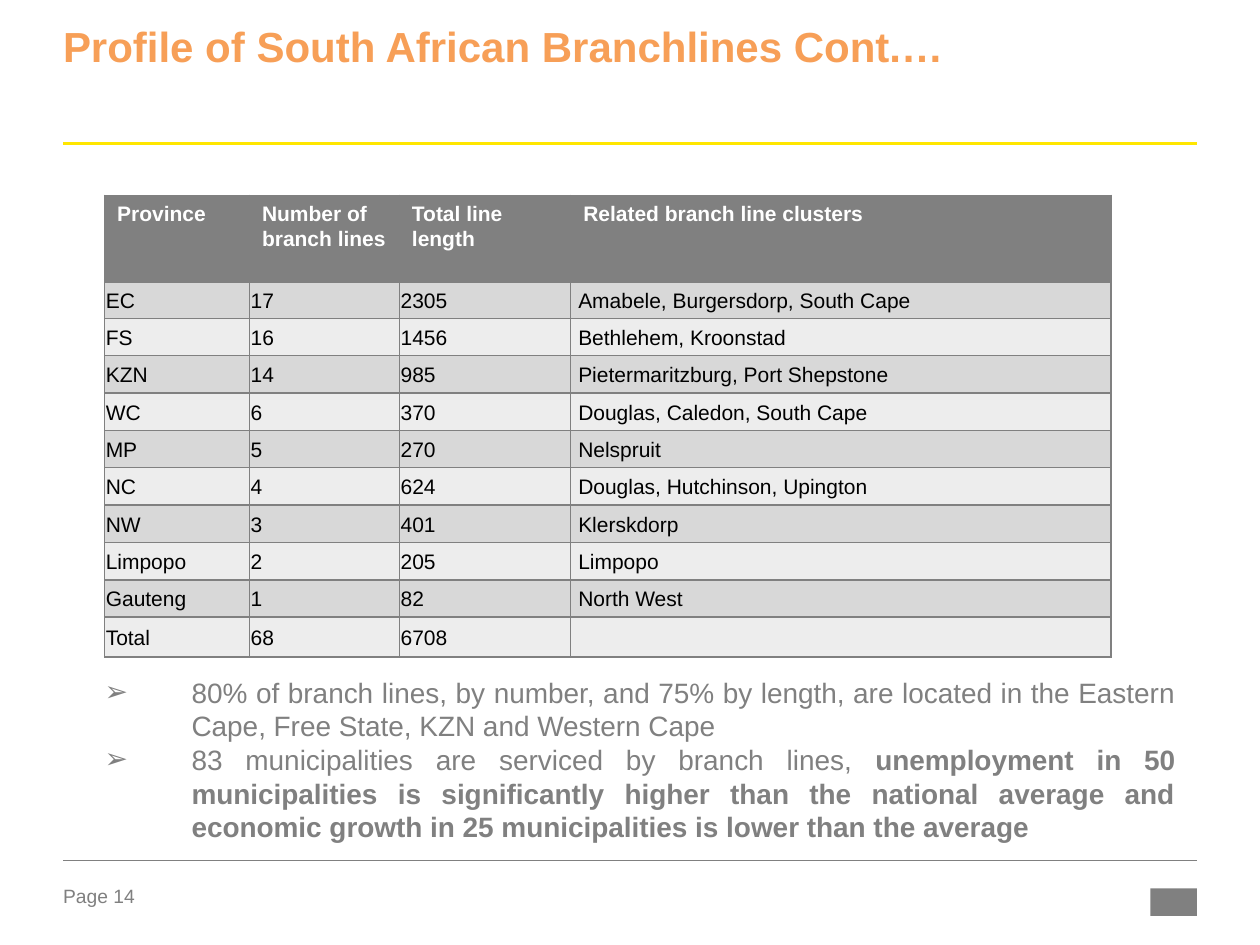
import pptx
import pptx.util
import pptx.dml.color
import pptx.enum.shapes
import pptx.enum.text
import pptx.oxml.ns
from lxml import etree

Inches, Pt = pptx.util.Inches, pptx.util.Pt
RGB = pptx.dml.color.RGBColor.from_string
TextEnum = pptx.enum.text

TITLE = "Profile of South African Branchlines Cont.…"
HEADER = ("Province", "Number of branch lines", "Total line length",
          "Related branch line clusters")
PROVINCES = [
    ("EC", "17", "2305", "Amabele, Burgersdorp, South Cape"),
    ("FS", "16", "1456", "Bethlehem, Kroonstad"),
    ("KZN", "14", "985", "Pietermaritzburg, Port Shepstone"),
    ("WC", "6", "370", "Douglas, Caledon, South Cape"),
    ("MP", "5", "270", "Nelspruit"),
    ("NC", "4", "624", "Douglas, Hutchinson, Upington"),
    ("NW", "3", "401", "Klerskdorp"),
    ("Limpopo", "2", "205", "Limpopo"),
    ("Gauteng", "1", "82", "North West"),
    ("Total", "68", "6708", ""),
]
# Each finding is a list of (text, bold) spans.
FINDINGS = [
    [("80% of branch lines, by number, and 75% by length, are located in the "
      "Eastern Cape, Free State, KZN and Western Cape", False)],
    [("83 municipalities are serviced by branch lines, ", False),
     ("unemployment in 50 municipalities is significantly higher than the "
      "national average and economic growth in 25 municipalities is lower "
      "than the average", True)],
]
PAGE_LABEL = "Page 14"

THEME = {
    "font": "Arial",
    "orange": "F79F57", "yellow": "FFE600", "gray": "808080",
    "white": "FFFFFF", "black": "000000", "bands": ("D8D8D8", "EDEDED"),
    "title": 24, "body": 16, "table": 12, "footer": 11,
}
LEFT, RIGHT = 0.5, 9.5
TABLE_LEFT, TABLE_TOP, TABLE_HEIGHT = 0.83, 1.55, 3.62
COLUMN_WIDTHS = (1.15, 1.19, 1.36, 4.29)
HEADER_HEIGHT, TOTAL_HEIGHT = 0.68, 0.27
BULLET_INDENT = 0.69


def apply(target, values):
    for name, value in values.items():
        setattr(target, name, value)


def add_span(para, text, size, color, bold=False):
    span = para.add_run()
    span.text = text
    apply(span.font, {"name": THEME["font"], "size": Pt(THEME[size]),
                      "bold": bold})
    span.font.color.rgb = RGB(THEME[color])


def place(shape, left, top, width, height):
    apply(shape, {"left": Inches(left), "top": Inches(top),
                  "width": Inches(width), "height": Inches(height)})


def set_frame(frame, top_margin=0):
    apply(frame, {"margin_left": 0, "margin_right": 0, "margin_bottom": 0,
                  "margin_top": Inches(top_margin), "word_wrap": True,
                  "auto_size": TextEnum.MSO_AUTO_SIZE.NONE,
                  "vertical_anchor": TextEnum.MSO_ANCHOR.TOP})


def add_child(parent, tag, **attributes):
    return etree.SubElement(parent, pptx.oxml.ns.qn(tag), attributes)


def add_rule(page, y, color, weight):
    rule = page.shapes.add_connector(
        pptx.enum.shapes.MSO_CONNECTOR.STRAIGHT,
        Inches(LEFT), Inches(y), Inches(RIGHT), Inches(y))
    rule.line.color.rgb = RGB(THEME[color])
    rule.line.width = Pt(weight)
    add_child(rule._element.spPr, "a:effectLst")


def add_title(page):
    title = page.shapes.title
    place(title, LEFT, 0.22, RIGHT - LEFT, 0.62)
    set_frame(title.text_frame)
    para = title.text_frame.paragraphs[0]
    apply(para, {"alignment": TextEnum.PP_ALIGN.LEFT, "line_spacing": 0.85})
    add_span(para, TITLE, "title", "orange", True)


def add_borders(cell, bottom):
    properties = cell._tc.get_or_add_tcPr()
    for side, weight in (("L", 1), ("R", 1), ("T", 1), ("B", bottom)):
        line = add_child(properties, f"a:ln{side}", w=str(Pt(weight)))
        add_child(add_child(line, "a:solidFill"), "a:srgbClr",
                  val=THEME["gray"])


def add_province_table(page):
    rows = [HEADER] + PROVINCES
    table = page.shapes.add_table(
        len(rows), len(HEADER), Inches(TABLE_LEFT), Inches(TABLE_TOP),
        Inches(sum(COLUMN_WIDTHS)), Inches(TABLE_HEIGHT)).table
    table.horz_banding = False
    for column, width in zip(table.columns, COLUMN_WIDTHS):
        column.width = Inches(width)
    body_height = ((TABLE_HEIGHT - HEADER_HEIGHT - TOTAL_HEIGHT)
                   / (len(rows) - 2))
    heights = ([HEADER_HEIGHT] + [body_height] * (len(rows) - 2)
               + [TOTAL_HEIGHT])

    for r, values in enumerate(rows):
        table.rows[r].height = Inches(heights[r])
        is_header = r == 0
        fill = THEME["gray"] if is_header else THEME["bands"][(r - 1) % 2]
        for c, value in enumerate(values):
            cell = table.cell(r, c)
            add_borders(cell, 3 if is_header else 1)
            cell.fill.solid()
            cell.fill.fore_color.rgb = RGB(fill)
            if not is_header:
                is_cluster = c == len(HEADER) - 1
                apply(cell, {
                    "margin_left": Inches(0.06 if is_cluster else 0.01),
                    "margin_right": Inches(0.01),
                    "margin_top": Inches(0.01), "margin_bottom": 0,
                    "vertical_anchor": TextEnum.MSO_ANCHOR.MIDDLE})
            para = cell.text_frame.paragraphs[0]
            para.line_spacing = Pt(14)
            if value:
                add_span(para, value, "table",
                         "white" if is_header else "black", is_header)


def add_findings(page):
    body = page.placeholders[1]
    place(body, TABLE_LEFT, 5.32, 8.5, 1.39)
    frame = body.text_frame
    set_frame(frame, 0.04)
    for i, spans in enumerate(FINDINGS):
        para = frame.add_paragraph() if i else frame.paragraphs[0]
        apply(para, {"level": 3, "alignment": TextEnum.PP_ALIGN.JUSTIFY,
                     "space_before": Pt(0), "space_after": Pt(0)})
        properties = para._p.get_or_add_pPr()
        properties.set("marL", str(Inches(BULLET_INDENT)))
        properties.set("indent", str(-Inches(BULLET_INDENT)))
        add_child(properties, "a:buFont", typeface=THEME["font"])
        add_child(properties, "a:buChar", char="➢")
        for text, bold in spans:
            add_span(para, text, "body", "gray", bold)


def add_footer(page):
    label = page.shapes.add_textbox(
        Inches(LEFT), Inches(7.02), Inches(0.79), Inches(0.22))
    set_frame(label.text_frame)
    add_span(label.text_frame.paragraphs[0], PAGE_LABEL, "footer", "gray")
    block = page.shapes.add_shape(
        pptx.enum.shapes.MSO_SHAPE.RECTANGLE,
        Inches(9.13), Inches(7.05), Inches(0.37), Inches(0.22))
    block.shadow.inherit = False
    block.fill.solid()
    block.fill.fore_color.rgb = RGB(THEME["gray"])
    block.line.fill.background()


def main():
    deck = pptx.Presentation()
    apply(deck, {"slide_width": Inches(10), "slide_height": Inches(7.5)})
    page = deck.slides.add_slide(deck.slide_layouts[1])
    add_rule(page, 1.14, "yellow", 1.5)
    add_rule(page, 6.83, "gray", 0.25)
    add_title(page)
    add_province_table(page)
    add_findings(page)
    add_footer(page)
    deck.save("out.pptx")


if __name__ == "__main__":
    main()
